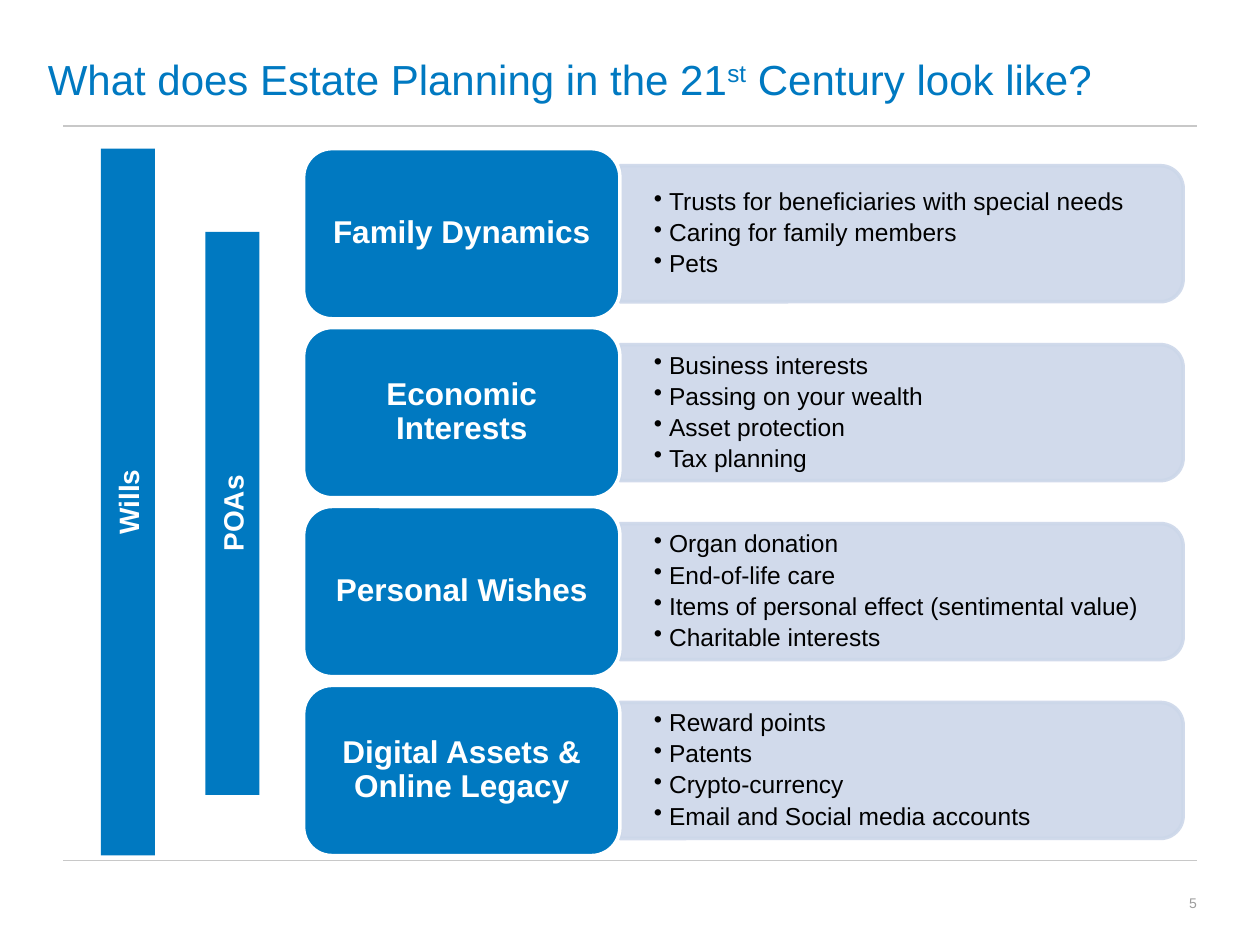
from lxml import etree
from pptx import Presentation
from pptx.dml.color import RGBColor
from pptx.enum.shapes import MSO_CONNECTOR, MSO_SHAPE
from pptx.enum.text import MSO_ANCHOR, PP_ALIGN
from pptx.oxml.ns import qn
from pptx.util import Inches, Pt

LINE = MSO_CONNECTOR.STRAIGHT
RECT = MSO_SHAPE.RECTANGLE
ROUND = MSO_SHAPE.ROUNDED_RECTANGLE
TAB = MSO_SHAPE.ROUND_2_SAME_RECTANGLE
MIDDLE = MSO_ANCHOR.MIDDLE
LEFT, CENTER, RIGHT = PP_ALIGN.LEFT, PP_ALIGN.CENTER, PP_ALIGN.RIGHT

COLORS = {"blue": "0079C1", "pale": "CCD7E9", "rule": "C8C8C8",
          "gray": "9D9D9D", "white": "FFFFFF", "black": "000000"}
TITLE = [("What does Estate Planning in the 21", 0), ("st", 30000),
         (" Century look like?", 0)]
TOPICS = [
    ("Family Dynamics",
     ["Trusts for beneficiaries with special needs",
      "Caring for family members", "Pets"]),
    ("Economic Interests",
     ["Business interests", "Passing on your wealth",
      "Asset protection", "Tax planning"]),
    ("Personal Wishes",
     ["Organ donation", "End-of-life care",
      "Items of personal effect (sentimental value)",
      "Charitable interests"]),
    ("Digital Assets & Online Legacy",
     ["Reward points", "Patents", "Crypto-currency",
      "Email and Social media accounts"]),
]
BARS = [("Wills", 0.8, 1.18, 5.61), ("POAs", 1.63, 1.84, 4.47)]


class Painter:
    face = "Arial"

    def __init__(self, slide):
        self.slide = slide
        self.shapes = slide.shapes

    def color(self, name):
        return RGBColor.from_string(COLORS[name])

    def rule(self, y):
        line = self.shapes.add_connector(
            LINE, Inches(0.5), Inches(y), Inches(9.5), Inches(y))
        line.line.color.rgb = self.color("rule")
        line.line.width = Pt(0.75)
        etree.SubElement(line.element.spPr, qn("a:effectLst"))

    def shape(self, kind, box, fill, edge=None):
        shape = self.shapes.add_shape(kind, *map(Inches, box))
        shape.shadow.inherit = False
        shape.fill.solid()
        shape.fill.fore_color.rgb = self.color(fill)
        if edge:
            shape.line.color.rgb = self.color(edge)
            shape.line.width = Pt(2)
        else:
            shape.line.fill.background()
        return shape

    def frame(self, shape, pad=(0, 0)):
        frame = shape.text_frame
        frame.word_wrap = True
        frame.vertical_anchor = MIDDLE
        frame.margin_left = frame.margin_right = Inches(pad[0])
        frame.margin_top = frame.margin_bottom = Inches(pad[1])
        return frame

    def style(self, para, size, color, align=LEFT, bold=False):
        para.alignment = align
        font = para.font
        font.name, font.size, font.bold = self.face, Pt(size), bold
        font.color.rgb = self.color(color)

    def text(self, box, runs, size, color, align=LEFT):
        shape = self.shapes.add_textbox(*map(Inches, box))
        para = self.frame(shape).paragraphs[0]
        for words, lift in runs:
            run = para.add_run()
            run.text = words
            if lift:
                run.font.bold = False
                run.font._element.set("baseline", str(lift))
        self.style(para, size, color, align)

    def label(self, box, words):
        shape = self.shape(ROUND, box, "blue", "white")
        para = self.frame(shape, (0.07, 0.04)).paragraphs[0]
        para.text = words
        para.line_spacing = 0.9
        self.style(para, 18, "white", CENTER, True)

    def panel(self, x, mid, width, height):
        box = (x + (width - height) / 2, mid - width / 2, height, width)
        shape = self.shape(TAB, box, "pale", "pale")
        shape.rotation = 90
        for tint in shape.element.spPr.iter(qn("a:srgbClr")):
            etree.SubElement(tint, qn("a:alpha"), val="90000")

    def bullets(self, box, items):
        shape = self.shapes.add_textbox(*map(Inches, box))
        frame = self.frame(shape, (0.27, 0.14))
        for i, item in enumerate(items):
            para = frame.add_paragraph() if i else frame.paragraphs[0]
            para.text = item
            para.line_spacing = 0.9
            para.space_after = Pt(2.6)
            props = para._p.get_or_add_pPr()
            props.set("marL", str(Inches(0.12)))
            props.set("indent", str(-Inches(0.12)))
            etree.SubElement(props, qn("a:buChar"), char="•")
            self.style(para, 14, "black")

    def bar(self, box, words):
        shape = self.shape(RECT, box, "blue")
        para = self.frame(shape).paragraphs[0]
        para.text = words
        shape.element.txBody.bodyPr.set("vert", "vert270")
        self.style(para, 16, "white", CENTER, True)


def main():
    deck = Presentation()
    deck.slide_width, deck.slide_height = Inches(10), Inches(7.5)
    art = Painter(deck.slides.add_slide(deck.slide_layouts[6]))
    for y in (6.83, 1):
        art.rule(y)
    art.text((0.38, 0.25, 9, 0.75), TITLE, 24, "blue")
    for row, (name, items) in enumerate(TOPICS):
        top = 1.18 + 1.42 * row
        mid = top + 1.35 / 2
        art.panel(4.92, mid, 4.47, 1.08)
        art.bullets((4.92, mid - 0.49, 4.41, 0.98), items)
        art.label((2.41, top, 2.51, 1.35), name)
    art.text((9, 6.83, 0.5, 0.67), [("5", 0)], 8, "gray", RIGHT)
    for name, x, top, height in BARS:
        art.bar((x, top, 0.43, height), name)
    deck.save("out.pptx")


if __name__ == "__main__":
    main()
